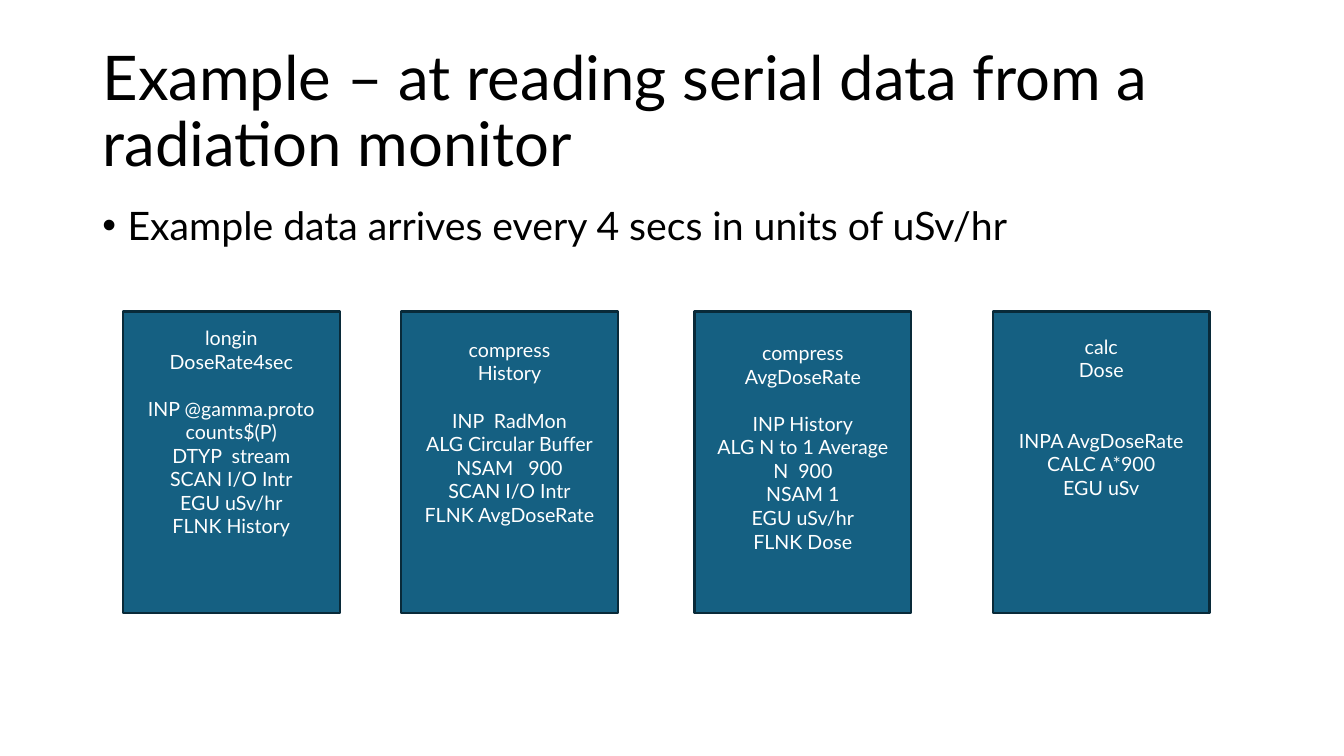
"""Build the slide on reading serial data from a radiation monitor."""
from pptx import Presentation
from pptx.dml.color import RGBColor
from pptx.enum.shapes import MSO_SHAPE
from pptx.enum.text import MSO_ANCHOR, MSO_AUTO_SIZE, PP_ALIGN
from pptx.util import Pt

RECT = MSO_SHAPE.RECTANGLE
LEFT, CENTER = PP_ALIGN.LEFT, PP_ALIGN.CENTER
TOP, MIDDLE = MSO_ANCHOR.TOP, MSO_ANCHOR.MIDDLE
NO_AUTOFIT = MSO_AUTO_SIZE.NONE

TITLE = "Example – at reading serial data from a radiation monitor"
BULLET = "Example data arrives every 4 secs in units of uSv/hr"
# left edge, space above the text, lines between heading and fields, heading, fields
RECORDS = [
    (87.84, 10.4, 1, ["longin", "DoseRate4sec"],
     ["INP @gamma.proto counts$(P)", "DTYP  stream", "SCAN I/O Intr",
      "EGU uSv/hr", "FLNK History"]),
    (286.56, 18.8, 1, ["compress", "History"],
     ["INP  RadMon", "ALG Circular Buffer", "NSAM   900", "SCAN I/O Intr",
      "FLNK AvgDoseRate"]),
    (496.08, 21.2, 1, ["compress", "AvgDoseRate"],
     ["INP History", "ALG N to 1 Average", "N  900", "NSAM 1", "EGU uSv/hr",
      "FLNK Dose"]),
    (709.2, 16.4, 2, ["calc", "Dose"],
     ["INPA AvgDoseRate", "CALC A*900", "EGU uSv"]),
]
BOX_TOP, BOX_W, BOX_H = 222.48, 154.8, 215.28
LINE_H = 16.8


def rgb(value):
    return RGBColor.from_string(value)


def add_text(p, text, size, color, align):
    p.alignment = align
    r = p.add_run()
    r.text = text
    r.font.name = "Lato"
    r.font.size = Pt(size)
    r.font.color.rgb = rgb(color)


def place(sp, left, top, width, height, anchor):
    sp.left, sp.top, sp.width, sp.height = map(Pt, (left, top, width, height))
    tf = sp.text_frame
    tf.word_wrap = True
    tf.auto_size = NO_AUTOFIT
    tf.vertical_anchor = anchor
    return tf.paragraphs[0]


def add_record(s, left, inset, gap_lines, heading, fields):
    sp = s.shapes.add_shape(RECT, Pt(left), Pt(BOX_TOP), Pt(BOX_W), Pt(BOX_H))
    sp.shadow.inherit = False
    sp.fill.solid()
    sp.fill.fore_color.rgb = rgb("156082")
    sp.line.color.rgb = rgb("092A39")
    sp.line.width = Pt(1.5)
    tf = sp.text_frame
    tf.word_wrap = True
    tf.vertical_anchor = TOP
    tf.margin_top = Pt(inset)
    for i, text in enumerate(heading + fields):
        p = tf.add_paragraph() if i else tf.paragraphs[0]
        add_text(p, text, 14, "FFFFFF", CENTER)
        if i == len(heading):
            p.space_before = Pt(gap_lines * LINE_H)


def main():
    prs = Presentation()
    prs.slide_width, prs.slide_height = Pt(960), Pt(540)
    s = prs.slides.add_slide(prs.slide_layouts[1])

    p = place(s.shapes.title, 66, 28.75, 828, 104.4, MIDDLE)
    p.line_spacing = 0.9
    add_text(p, TITLE, 44, "000000", LEFT)

    p = place(s.placeholders[1], 66, 143.75, 828, 342.6, TOP)
    p.line_spacing = 0.9
    p.space_before = Pt(10)
    add_text(p, BULLET, 28, "000000", LEFT)
    pPr = p._p.get_or_add_pPr()
    pPr.set("marL", str(Pt(18)))
    pPr.set("indent", str(Pt(-18)))

    for record in RECORDS:
        add_record(s, *record)
    prs.save("out.pptx")


if __name__ == "__main__":
    main()
